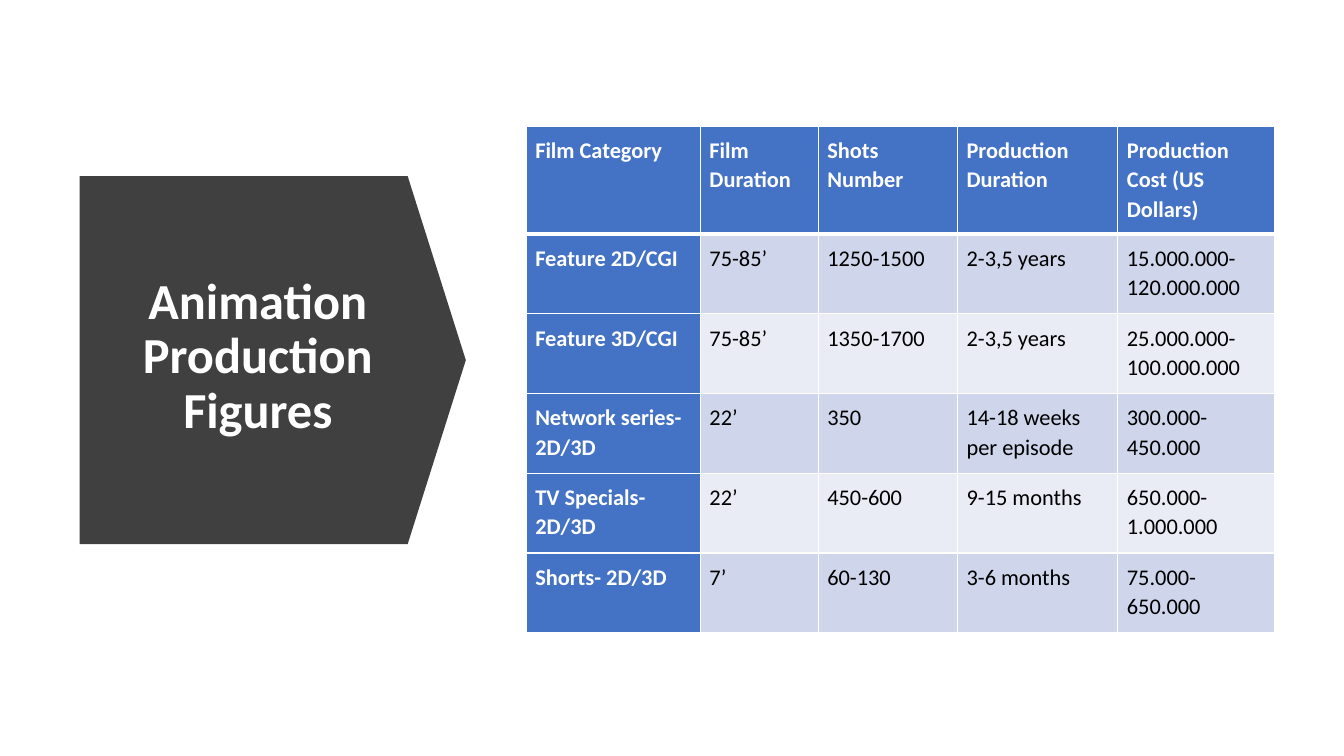
from lxml.etree import SubElement
from pptx import Presentation
from pptx.dml.color import RGBColor
from pptx.enum.shapes import MSO_SHAPE
from pptx.enum.text import MSO_ANCHOR, MSO_AUTO_SIZE, PP_ALIGN
from pptx.oxml.ns import qn
from pptx.util import Cm, Pt

TITLE = "Animation Production Figures"
ROWS = [
    ("Film Category", "Film Duration", "Shots Number", "Production Duration",
     "Production Cost (US Dollars)"),
    ("Feature 2D/CGI", "75-85’", "1250-1500", "2-3,5 years", "15.000.000-120.000.000"),
    ("Feature 3D/CGI", "75-85’", "1350-1700", "2-3,5 years", "25.000.000-100.000.000"),
    ("Network series- 2D/3D", "22’", "350", "14-18 weeks per episode", "300.000-450.000"),
    ("TV Specials- 2D/3D", "22’", "450-600", "9-15 months", "650.000-1.000.000"),
    ("Shorts- 2D/3D", "7’", "60-130", "3-6 months", "75.000-650.000"),
]
COL_WIDTHS = [4.39, 2.97, 3.51, 4.04, 3.94]
ROW_HEIGHTS = [2.72] + [2.01] * 5
COLORS = {
    "arrow": "404040",
    "header": "4472C4",
    "odd": "CFD5EA",
    "even": "E9EBF5",
    "white": "FFFFFF",
    "black": "000000",
}


def rgb(name):
    return RGBColor.from_string(COLORS[name])


def write(tf, text, size=16, color="black", bold=False, align=PP_ALIGN.LEFT,
          spacing=1.07, anchor=MSO_ANCHOR.TOP):
    tf.word_wrap = True
    tf.vertical_anchor = anchor
    p = tf.paragraphs[0]
    p.alignment = align
    p.line_spacing = spacing
    p.space_before = p.space_after = Pt(0)
    r = p.add_run()
    r.text = text
    r.font.name = "Calibri"
    r.font.size = Pt(size)
    r.font.bold = bold
    r.font.color.rgb = rgb(color)


def add_borders(cell, **widths):
    tcPr = cell._tc.get_or_add_tcPr()
    for side in ("L", "R", "T", "B"):
        ln = SubElement(tcPr, qn(f"a:ln{side}"), w=str(Pt(widths.get(side, 1))))
        fill = SubElement(ln, qn("a:solidFill"))
        SubElement(fill, qn("a:srgbClr"), val=COLORS["white"])


prs = Presentation()
prs.slide_width, prs.slide_height = Cm(33.87), Cm(19.05)
s = prs.slides.add_slide(prs.slide_layouts[5])

title = s.shapes.title
title.left, title.top, title.width, title.height = Cm(2.84), Cm(5.46), Cm(7.32), Cm(7.09)
write(title.text_frame, TITLE, size=36, color="white", bold=True,
      align=PP_ALIGN.CENTER, spacing=0.9, anchor=MSO_ANCHOR.MIDDLE)
title.text_frame.auto_size = MSO_AUTO_SIZE.NONE

arrow = s.shapes.add_shape(MSO_SHAPE.DOWN_ARROW, Cm(2.24), Cm(4.21), Cm(9.27), Cm(9.73))
arrow.rotation = 270
arrow.adjustments[0] = 1
arrow.adjustments[1] = 0.158
arrow.shadow.inherit = False
arrow.fill.solid()
arrow.fill.fore_color.rgb = rgb("arrow")
arrow.line.fill.background()
title.element.addprevious(arrow.element)

table = s.shapes.add_table(len(ROWS), len(COL_WIDTHS), Cm(13.26), Cm(3.18),
                           Cm(sum(COL_WIDTHS)), Cm(sum(ROW_HEIGHTS))).table
table.first_col = True
for col, width in zip(table.columns, COL_WIDTHS):
    col.width = Cm(width)
for i, (row, height, values) in enumerate(zip(table.rows, ROW_HEIGHTS, ROWS)):
    row.height = Cm(height)
    for j, (cell, value) in enumerate(zip(row.cells, values)):
        heading = i == 0 or j == 0
        cell.margin_left = cell.margin_right = Cm(0.23)
        cell.margin_top = cell.margin_bottom = Cm(0.23)
        add_borders(cell, T=3 if i == 1 else 1, B=3 if i == 0 else 1)
        cell.fill.solid()
        cell.fill.fore_color.rgb = rgb("header" if heading else "odd" if i % 2 else "even")
        write(cell.text_frame, value, color="white" if heading else "black", bold=heading)

prs.save("out.pptx")
